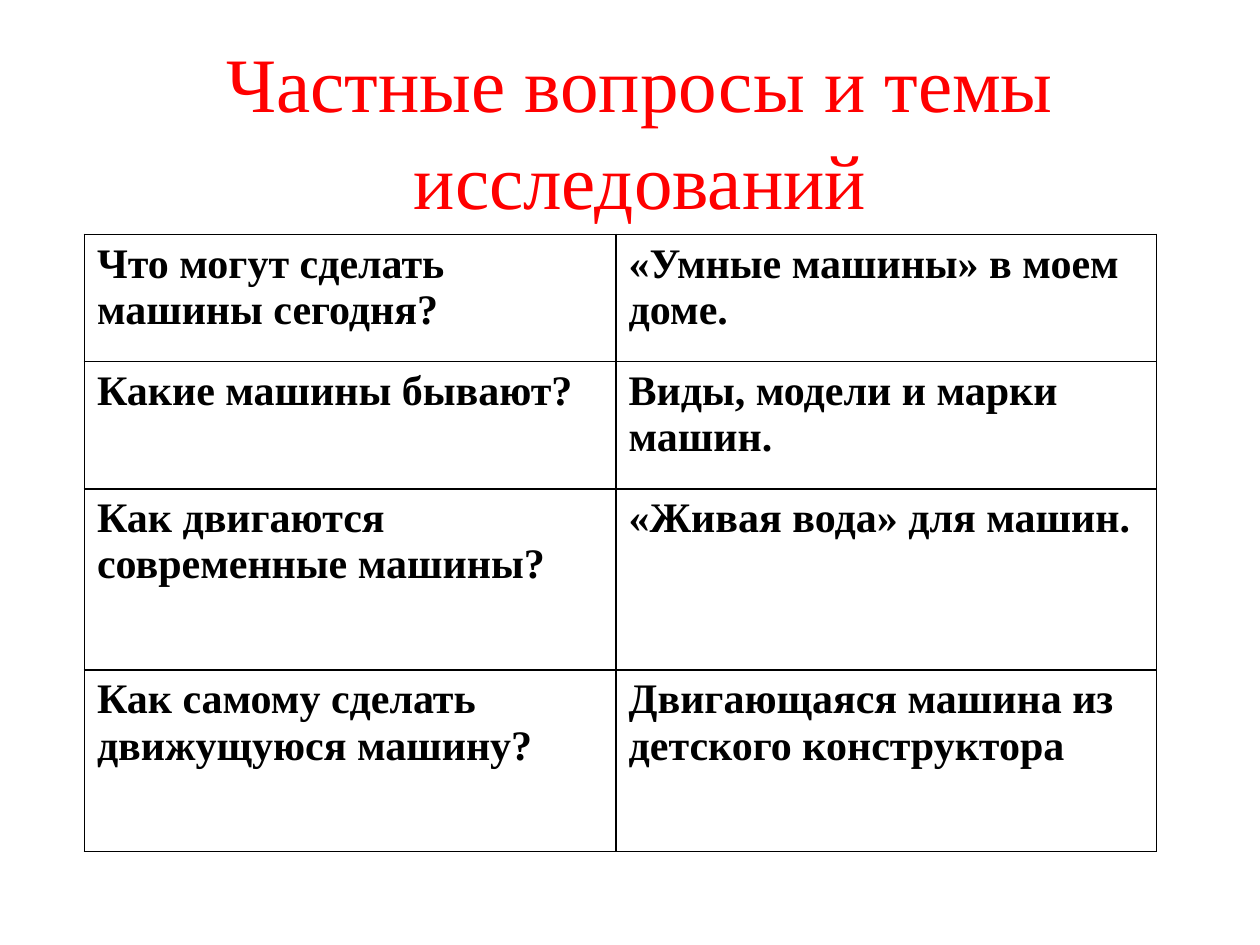
from lxml import etree
from pptx import Presentation
from pptx.dml.color import RGBColor
from pptx.enum.text import MSO_ANCHOR, PP_ALIGN
from pptx.oxml.ns import qn
from pptx.util import Inches, Pt

CENTER, LEFT = PP_ALIGN.CENTER, PP_ALIGN.LEFT
MIDDLE, TOP = MSO_ANCHOR.MIDDLE, MSO_ANCHOR.TOP
TITLE_ONLY = 5

THEME = {
    "title": {"name": "Times New Roman", "size": Pt(44), "bold": False, "color": "FF0000"},
    "cell": {"name": "Times New Roman", "size": Pt(24), "bold": True, "color": "000000"},
    "background": "FFFFFF",
    "border": "000000",
    "border_width": Pt(1),
}
COLUMN_WIDTHS = [4.22, 4.29]
ROW_HEIGHTS = [1.01, 1.01, 1.44, 1.44]
QUESTIONS_AND_TOPICS = [
    ("Что могут сделать машины сегодня?", "«Умные машины» в моем доме."),
    ("Какие машины бывают?", "Виды, модели и марки машин."),
    ("Как двигаются современные машины?", "«Живая вода» для машин."),
    ("Как самому сделать движущуюся машину?", "Двигающаяся машина из детского конструктора"),
]


def write_text(text_frame, text, style, alignment):
    paragraph = text_frame.paragraphs[0]
    paragraph.alignment = alignment
    run = paragraph.add_run()
    run.text = text
    for attribute, value in THEME[style].items():
        if attribute == "color":
            run.font.color.rgb = RGBColor.from_string(value)
        else:
            setattr(run.font, attribute, value)
    return paragraph


def add_borders(cell):
    properties = cell._tc.get_or_add_tcPr()
    for position, side in enumerate(("a:lnL", "a:lnR", "a:lnT", "a:lnB")):
        line = etree.Element(qn(side), w=str(THEME["border_width"]))
        fill = etree.SubElement(line, qn("a:solidFill"))
        etree.SubElement(fill, qn("a:srgbClr"), val=THEME["border"])
        properties.insert(position, line)


presentation = Presentation()
presentation.slide_width = Inches(10)
presentation.slide_height = Inches(7.5)
slide = presentation.slides.add_slide(presentation.slide_layouts[TITLE_ONLY])

title = slide.shapes.title
title_box = {"left": 0.83, "top": 0.21, "width": 8.5, "height": 1.61}
for attribute, value in title_box.items():
    setattr(title, attribute, Inches(value))
title.text_frame.word_wrap = True
title.text_frame.vertical_anchor = MIDDLE
heading = write_text(title.text_frame, "Частные вопросы и темы исследований", "title", CENTER)
heading.line_spacing = 1.05

table = slide.shapes.add_table(
    len(ROW_HEIGHTS), len(COLUMN_WIDTHS), Inches(0.67), Inches(1.86),
    Inches(sum(COLUMN_WIDTHS)), Inches(sum(ROW_HEIGHTS)),
).table
table.first_row = False
table.horz_banding = False
for column, width in zip(table.columns, COLUMN_WIDTHS):
    column.width = Inches(width)
for row, height, texts in zip(table.rows, ROW_HEIGHTS, QUESTIONS_AND_TOPICS):
    row.height = Inches(height)
    for cell, text in zip(row.cells, texts):
        cell.fill.solid()
        cell.fill.fore_color.rgb = RGBColor.from_string(THEME["background"])
        cell.vertical_anchor = TOP
        write_text(cell.text_frame, text, "cell", LEFT)
        add_borders(cell)

presentation.save("out.pptx")
